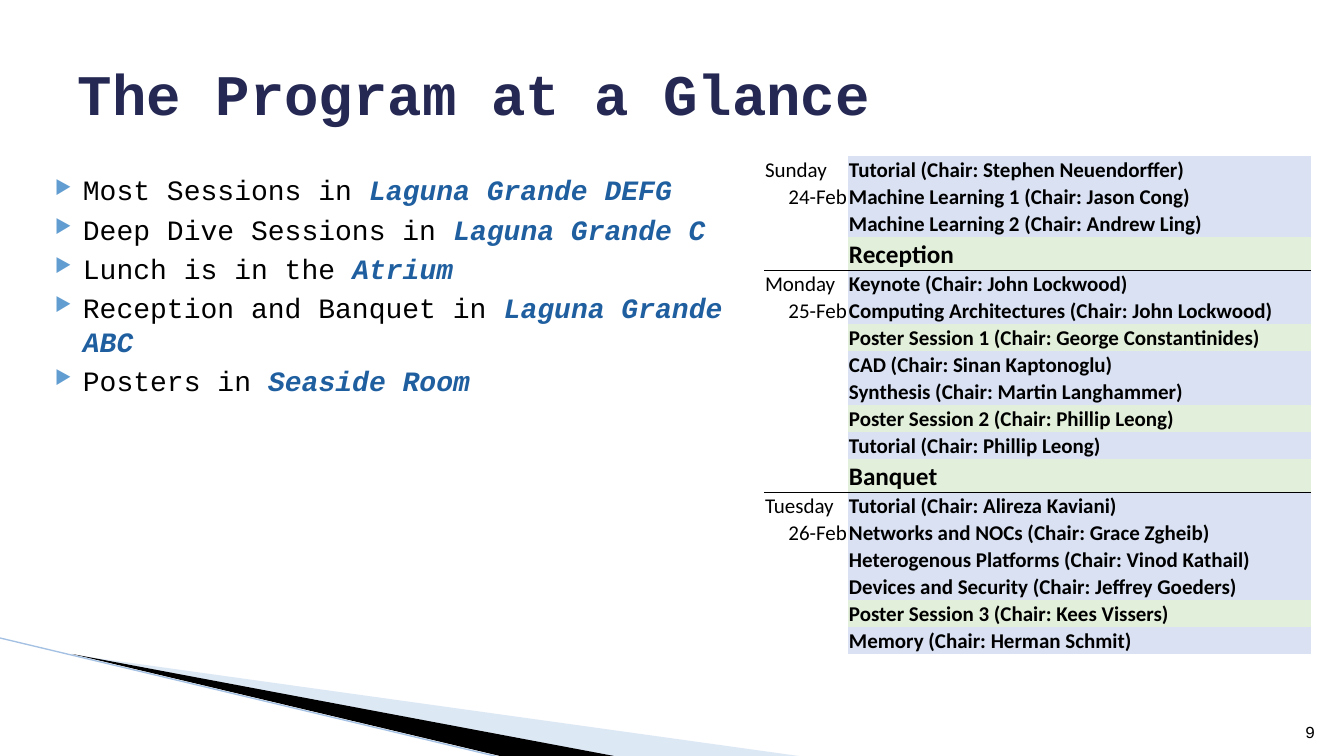
from dataclasses import dataclass

from lxml import etree
from pptx import Presentation
from pptx import util as u
from pptx.dml.color import RGBColor
from pptx.enum import shapes, text
from pptx.oxml import ns

TITLE = "The Program at a Glance"
PAGE = "9"
ROOMS = [
    ("Most Sessions in ", "Laguna Grande DEFG"),
    ("Deep Dive Sessions in ", "Laguna Grande C"),
    ("Lunch is in the ", "Atrium"),
    ("Reception and Banquet in ", "Laguna Grande ABC"),
    ("Posters in ", "Seaside Room"),
]
PROGRAM = [
    ("Sunday", "24-Feb", [
        "Tutorial (Chair: Stephen Neuendorffer)",
        "Machine Learning 1 (Chair: Jason Cong)",
        "Machine Learning 2 (Chair: Andrew Ling)",
        "Reception",
    ]),
    ("Monday", "25-Feb", [
        "Keynote (Chair: John Lockwood)",
        "Computing Architectures (Chair: John Lockwood)",
        "Poster Session 1 (Chair: George Constantinides)",
        "CAD (Chair: Sinan Kaptonoglu)",
        "Synthesis (Chair: Martin Langhammer)",
        "Poster Session 2 (Chair: Phillip Leong)",
        "Tutorial (Chair: Phillip Leong)",
        "Banquet",
    ]),
    ("Tuesday", "26-Feb", [
        "Tutorial (Chair: Alireza Kaviani)",
        "Networks and NOCs (Chair: Grace Zgheib)",
        "Heterogenous Platforms (Chair: Vinod Kathail)",
        "Devices and Security (Chair: Jeffrey Goeders)",
        "Poster Session 3 (Chair: Kees Vissers)",
        "Memory (Chair: Herman Schmit)",
    ]),
]
SOCIAL = ("Reception", "Banquet")
PALE_WEDGE = [(74, 655), (799, 756), (613, 756)]
DARK_WEDGE = [(72, 654), (614, 756), (500, 756)]
EDGE_LINE = (0, 638, 499, 757)


@dataclass(frozen=True)
class Theme:
    mono: str = "Courier New"
    sans: str = "Calibri"
    ink: str = "000000"
    heading: str = "242852"
    room: str = "1F5FA0"
    bullet: str = "629DD1"
    session: str = "D9E1F2"
    break_time: str = "E2EFDA"
    pale: str = "ABC6E6"
    edge: str = "A4C1E3"
    title_size: int = 41
    body_size: int = 20
    body_leading: int = 24
    social_size: int = 18
    table_size: int = 15
    page_size: int = 12


THEME = Theme()
PLAIN_TABLE = "{2D5ABB26-0587-4C30-8999-92F81FD0307C}"


def px(length):
    return u.Emu(round(length * 914400 / 100.8))


def color(value):
    return RGBColor.from_string(value)


def add_element(parent, tag, **attributes):
    return etree.SubElement(parent, ns.qn(tag), attributes)


def add_run(paragraph, words, size, font, ink=THEME.ink, bold=False, italic=False):
    run = paragraph.add_run()
    run.text = words
    run.font.size = u.Pt(size)
    run.font.name = font
    run.font.color.rgb = color(ink)
    run.font.bold = bold
    run.font.italic = italic


def add_frame(slide, left, top, width, height, anchor):
    frame = slide.shapes.add_textbox(px(left), px(top), px(width), px(height)).text_frame
    frame.word_wrap = True
    frame.vertical_anchor = anchor
    return frame


def add_wedge(slide, points, fill, opacity=100):
    builder = slide.shapes.build_freeform(*map(px, points[0]), scale=1.0)
    builder.add_line_segments([(px(x), px(y)) for x, y in points[1:]], close=True)
    shape = builder.convert_to_shape()
    shape.shadow.inherit = False
    shape.line.fill.background()
    shape.fill.solid()
    shape.fill.fore_color.rgb = color(fill)
    if opacity < 100:
        rgb = shape._element.spPr.find(".//" + ns.qn("a:srgbClr"))
        add_element(rgb, "a:alpha", val=str(opacity * 1000))


def add_decoration(slide):
    add_wedge(slide, PALE_WEDGE, THEME.pale, 40)
    add_wedge(slide, DARK_WEDGE, THEME.ink)
    edge = slide.shapes.add_connector(shapes.MSO_CONNECTOR.STRAIGHT, *map(px, EDGE_LINE))
    edge.line.color.rgb = color(THEME.edge)
    edge.line.width = u.Pt(0.95)
    add_element(edge._element.spPr, "a:effectLst")


def add_rooms(slide):
    frame = add_frame(slide, 33, 168, 723, 494, text.MSO_ANCHOR.TOP)
    for index, (session, room) in enumerate(ROOMS):
        paragraph = frame.add_paragraph() if index else frame.paragraphs[0]
        paragraph.line_spacing = u.Pt(THEME.body_leading)
        if index:
            paragraph.space_before = u.Pt(4)
        properties = paragraph._p.get_or_add_pPr()
        properties.set("marL", str(px(40)))
        properties.set("indent", str(px(-28)))
        add_element(add_element(properties, "a:buClr"), "a:srgbClr", val=THEME.bullet)
        add_element(properties, "a:buSzPct", val="68000")
        add_element(properties, "a:buChar", char="▶")
        add_run(paragraph, session, THEME.body_size, THEME.mono)
        add_run(paragraph, room, THEME.body_size, THEME.mono, THEME.room, True, True)


def fill_cell(cell, words, size, bold=False, fill=None, align=None, rule=False):
    cell.margin_left = cell.margin_right = cell.margin_top = px(1)
    cell.margin_bottom = 0
    cell.vertical_anchor = text.MSO_ANCHOR.BOTTOM
    paragraph = cell.text_frame.paragraphs[0]
    if align is not None:
        paragraph.alignment = align
    if words:
        add_run(paragraph, words, size, THEME.sans, bold=bold)
    else:
        add_element(paragraph._p, "a:endParaRPr", sz=str(size * 100))
    if fill:
        cell.fill.solid()
        cell.fill.fore_color.rgb = color(fill)
    else:
        cell.fill.background()
    if rule:
        border = etree.Element(ns.qn("a:lnB"), w=str(u.Pt(0.5)))
        add_element(add_element(border, "a:solidFill"), "a:srgbClr", val=THEME.ink)
        cell._tc.get_or_add_tcPr().insert(0, border)


def add_program(slide):
    rows = []
    for day, date, sessions in PROGRAM:
        labels = [day, date] + [""] * (len(sessions) - 2)
        rows += zip(labels, sessions)
    heights = [33 if session in SOCIAL else 27 for _, session in rows]
    frame = slide.shapes.add_table(len(rows), 2, px(764), px(156), px(547), px(sum(heights)))
    table = frame.table
    table.first_row = table.horz_banding = False
    table._tbl.tblPr.find(ns.qn("a:tableStyleId")).text = PLAIN_TABLE
    for column, width in zip(table.columns, (84, 463)):
        column.width = px(width)
    dates = [date for _, date, _ in PROGRAM]
    for index, (label, session) in enumerate(rows):
        table.rows[index].height = px(heights[index])
        social = session in SOCIAL
        relaxed = social or session.startswith("Poster")
        align = text.PP_ALIGN.RIGHT if label in dates else None
        fill_cell(table.cell(index, 0), label, THEME.table_size, align=align, rule=social)
        fill_cell(table.cell(index, 1), session,
                  THEME.social_size if social else THEME.table_size, True,
                  THEME.break_time if relaxed else THEME.session, rule=social)


def main():
    presentation = Presentation()
    presentation.slide_width, presentation.slide_height = px(1344), px(756)
    slide = presentation.slides.add_slide(presentation.slide_layouts[6])
    add_decoration(slide)
    add_rooms(slide)
    title = add_frame(slide, 68, 30, 1210, 126, text.MSO_ANCHOR.MIDDLE).paragraphs[0]
    add_run(title, TITLE, THEME.title_size, THEME.mono, THEME.heading, True)
    page = add_frame(slide, 1254, 707, 71, 40, text.MSO_ANCHOR.BOTTOM).paragraphs[0]
    page.alignment = text.PP_ALIGN.RIGHT
    add_run(page, PAGE, THEME.page_size, THEME.mono)
    add_program(slide)
    presentation.save("out.pptx")


if __name__ == "__main__":
    main()
